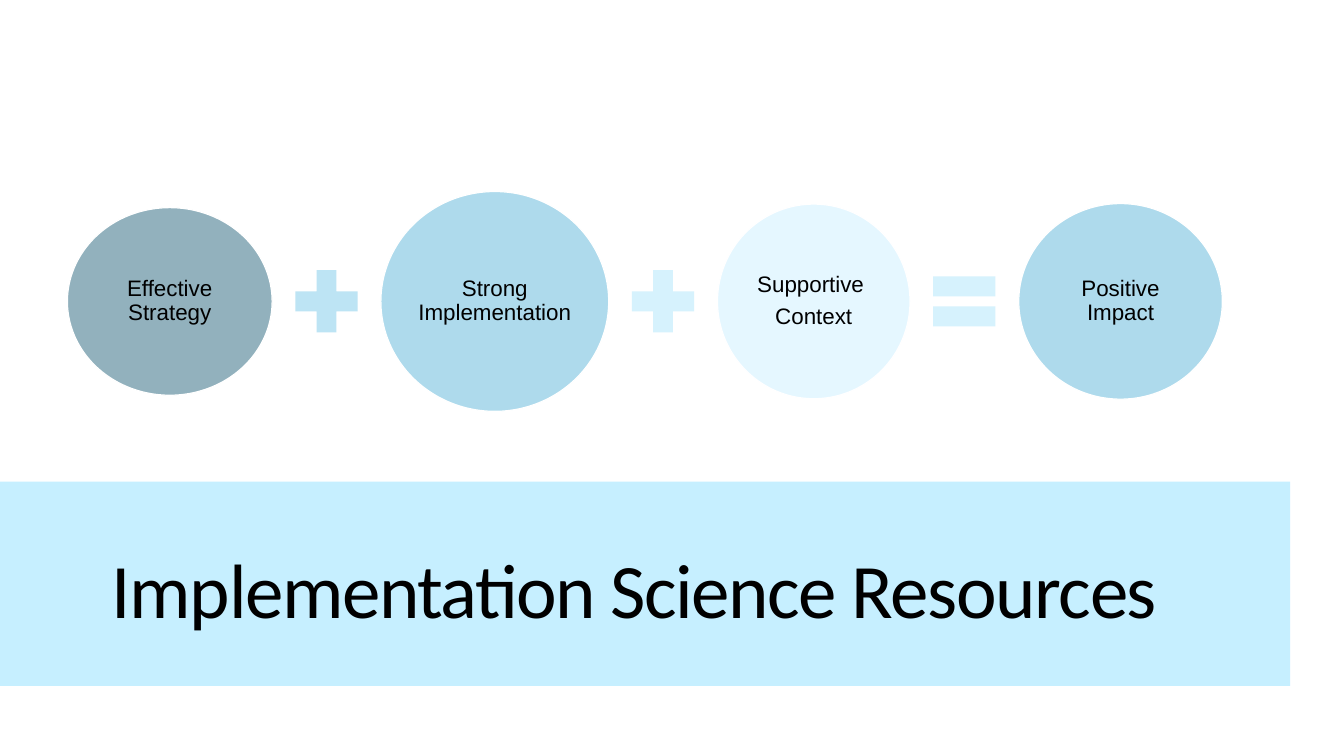
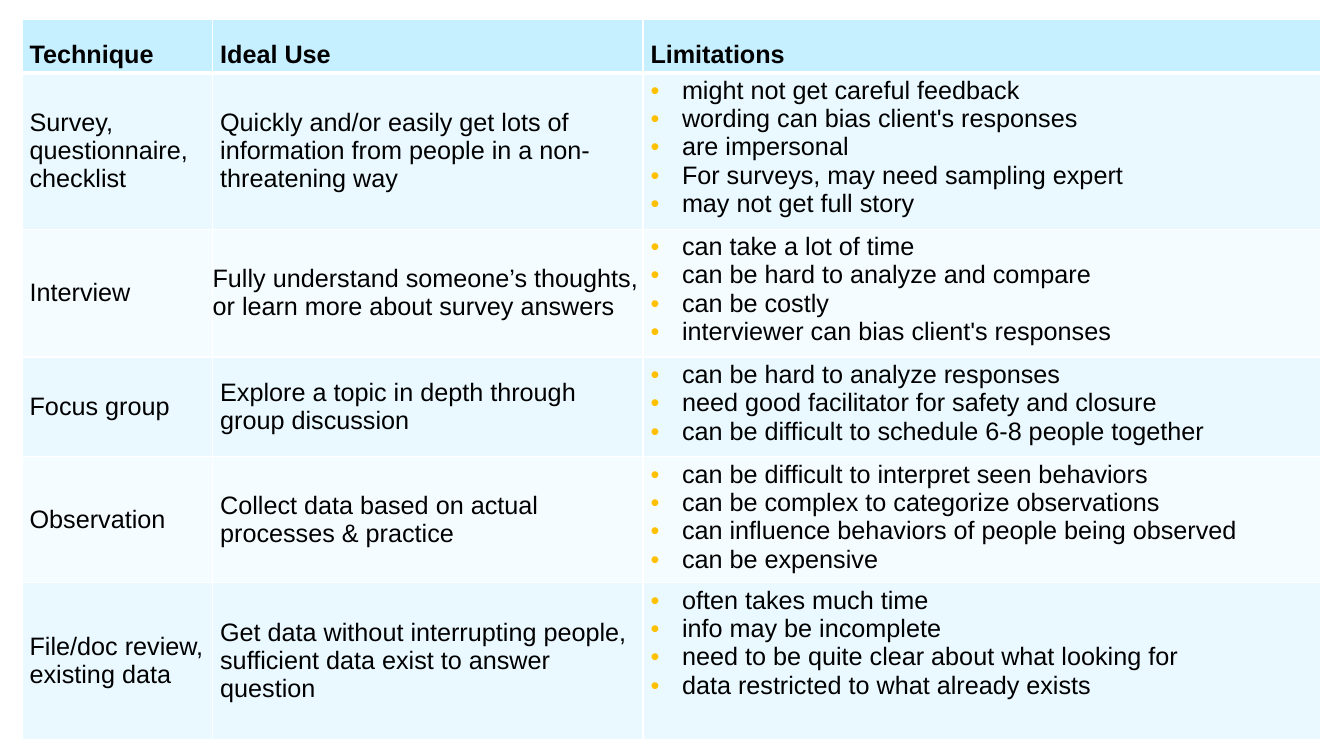
from dataclasses import dataclass

from lxml.etree import SubElement
from pptx import Presentation
from pptx.dml.color import RGBColor
from pptx.enum.shapes import MSO_SHAPE
from pptx.enum.text import MSO_ANCHOR, PP_ALIGN
from pptx.oxml.ns import qn
from pptx.util import Pt


@dataclass(frozen=True)
class Theme:
    band: str = "C6EFFF"
    text: str = "000000"
    white: str = "FFFFFF"
    slate: str = "92B1BD"
    sky: str = "AEDAEC"
    ice: str = "E5F7FF"
    strong_sign: str = "BDE4F4"
    pale_sign: str = "D6F2FD"
    odd_row: str = "EAF9FF"
    even_row: str = "F5FCFF"
    bullet: str = "FFC000"
    title_font: str = "Calibri"
    body_font: str = "Arial"
    title_size: float = 55
    table_size: float = 18
    circle_size: float = 16


THEME = Theme()

EQUATION_LEFT, EQUATION_MIDDLE = 48.2, 215.3
EQUATION_GAP, SIGN_SIZE = 8.6, 60.5

# Circles: lines, width, height, fill
CIRCLES = [
    (["Effective Strategy"], 146.2, 134, THEME.slate),
    (["Strong Implementation"], 162.7, 157, THEME.sky),
    (["Supportive ", "Context"], 137.5, 139, THEME.ice),
    (["Positive Impact"], 145.4, 139.7, THEME.sky),
]
# Signs between the circles: shape, fill
SIGNS = [
    (MSO_SHAPE.MATH_PLUS, THEME.strong_sign),
    (MSO_SHAPE.MATH_PLUS, THEME.pale_sign),
    (MSO_SHAPE.MATH_EQUAL, THEME.pale_sign),
]

COLUMN_WIDTHS = [136.1, 307.4, 483.8]
ROW_HEIGHTS = [38.2, 111.6, 91.4, 71.3, 90, 111.6]
HEADINGS = ["Technique", "Ideal Use", "Limitations"]
TECHNIQUES = [
    ("Survey, questionnaire, checklist",
     "Quickly and/or easily get lots of information from people in a non- threatening way",
     ["might not get careful feedback",
      "wording can bias client's responses",
      "are impersonal",
      "For surveys, may need sampling expert",
      "may not get full story"]),
    ("Interview",
     "Fully understand someone’s thoughts, or learn more about survey answers",
     ["can take a lot of time",
      "can be hard to analyze and compare",
      "can be costly",
      "interviewer can bias client's responses"]),
    ("Focus group",
     "Explore a topic in depth through group discussion",
     ["can be hard to analyze responses",
      "need good facilitator for safety and closure",
      "can be difficult to schedule 6-8 people together"]),
    ("Observation",
     "Collect data based on actual processes & practice",
     ["can be difficult to interpret seen behaviors",
      "can be complex to categorize observations",
      "can influence behaviors of people being observed",
      "can be expensive"]),
    ("File/doc review, existing data",
     "Get data without interrupting people, sufficient data exist to answer question",
     ["often takes much time",
      "info may be incomplete",
      "need to be quite clear about what looking for",
      "data restricted to what already exists"]),
]


def color(value):
    return RGBColor.from_string(value)


def style_font(paragraph, name, size, bold=False):
    font = paragraph.font
    font.name, font.size, font.bold = name, Pt(size), bold
    font.color.rgb = color(THEME.text)


def set_margins(target, horizontal, vertical):
    """Set the inner margins of a text frame or table cell."""
    target.margin_left = target.margin_right = Pt(horizontal)
    target.margin_top = target.margin_bottom = Pt(vertical)


def fill_paragraphs(text_frame, lines):
    text_frame.text = "\n".join(lines)
    return text_frame.paragraphs


def add_filled_shape(slide, kind, left, top, width, height, fill):
    shape = slide.shapes.add_shape(kind, Pt(left), Pt(top), Pt(width), Pt(height))
    shape.shadow.inherit = False
    shape.fill.solid()
    shape.fill.fore_color.rgb = color(fill)
    shape.line.fill.background()
    return shape


def add_title_band(slide, text):
    title = slide.shapes.title
    band = add_filled_shape(slide, MSO_SHAPE.RECTANGLE, 0, 344, 921.6, 146, THEME.band)
    title.element.addprevious(band.element)
    title.left, title.top, title.width, title.height = Pt(20.2), Pt(368.6), Pt(877.7), Pt(88.6)
    title.text_frame.vertical_anchor = MSO_ANCHOR.BOTTOM
    paragraph = fill_paragraphs(title.text_frame, [text])[0]
    paragraph.alignment = PP_ALIGN.CENTER
    paragraph.line_spacing = 0.9
    style_font(paragraph, THEME.title_font, THEME.title_size)
    paragraph.runs[0].font._element.set("spc", "-100")


def add_circle(slide, lines, left, width, height, fill):
    circle = add_filled_shape(slide, MSO_SHAPE.OVAL, left, EQUATION_MIDDLE - height / 2,
                              width, height, fill)
    circle.line.color.rgb = color(THEME.white)
    circle.line.width = Pt(0.85)
    text_frame = circle.text_frame
    text_frame.word_wrap = True
    text_frame.vertical_anchor = MSO_ANCHOR.MIDDLE
    set_margins(text_frame, 1.6, 1.6)
    for paragraph in fill_paragraphs(text_frame, lines):
        paragraph.alignment = PP_ALIGN.CENTER
        paragraph.line_spacing = 0.9
        paragraph.space_after = Pt(0.35 * THEME.circle_size)
        style_font(paragraph, THEME.body_font, THEME.circle_size)


def add_equation(slide):
    """Lay circles and signs in one row with equal gaps."""
    left = EQUATION_LEFT
    for index, (lines, width, height, fill) in enumerate(CIRCLES):
        add_circle(slide, lines, left, width, height, fill)
        left += width + EQUATION_GAP
        if index < len(SIGNS):
            kind, sign_fill = SIGNS[index]
            add_filled_shape(slide, kind, left, EQUATION_MIDDLE - SIGN_SIZE / 2,
                             SIGN_SIZE, SIGN_SIZE, sign_fill)
            left += SIGN_SIZE + EQUATION_GAP


def add_bullet(paragraph):
    properties = paragraph._p.get_or_add_pPr()
    properties.set("marL", str(Pt(22.5)))
    properties.set("indent", str(-Pt(22.5)))
    bullet_color = SubElement(properties, qn("a:buClr"))
    SubElement(bullet_color, qn("a:srgbClr")).set("val", THEME.bullet)
    SubElement(properties, qn("a:buFont")).set("typeface", THEME.body_font)
    SubElement(properties, qn("a:buChar")).set("char", "•")


def set_borders(cell, top_width, bottom_width):
    properties = cell._tc.get_or_add_tcPr()
    widths = {"a:lnL": 1, "a:lnR": 1, "a:lnT": top_width, "a:lnB": bottom_width}
    for position, (tag, width) in enumerate(widths.items()):
        line = properties.makeelement(qn(tag), {"w": str(Pt(width))})
        fill = SubElement(line, qn("a:solidFill"))
        SubElement(fill, qn("a:srgbClr")).set("val", THEME.white)
        properties.insert(position, line)


def fill_cell(cell, lines, fill, anchor, bold=False, bulleted=False):
    cell.fill.solid()
    cell.fill.fore_color.rgb = color(fill)
    cell.vertical_anchor = anchor
    set_margins(cell, 5.4, 2.7)
    for paragraph in fill_paragraphs(cell.text_frame, lines):
        if bulleted:
            add_bullet(paragraph)
        style_font(paragraph, THEME.body_font, THEME.table_size, bold)


def add_technique_table(slide):
    table = slide.shapes.add_table(
        len(ROW_HEIGHTS), len(COLUMN_WIDTHS), Pt(15.8), Pt(13.9),
        Pt(sum(COLUMN_WIDTHS)), Pt(sum(ROW_HEIGHTS))).table
    table.horz_banding = False
    for column, width in zip(table.columns, COLUMN_WIDTHS):
        column.width = Pt(width)
    for row, height in zip(table.rows, ROW_HEIGHTS):
        row.height = Pt(height)

    for column, heading in enumerate(HEADINGS):
        cell = table.cell(0, column)
        fill_cell(cell, [heading], THEME.band, MSO_ANCHOR.BOTTOM, bold=True)
        set_borders(cell, 1, 3)
    for row, (technique, ideal_use, limitations) in enumerate(TECHNIQUES, start=1):
        fill = THEME.odd_row if row % 2 else THEME.even_row
        for column, lines in enumerate([[technique], [ideal_use], limitations]):
            bulleted = lines is limitations
            anchor = MSO_ANCHOR.TOP if bulleted else MSO_ANCHOR.MIDDLE
            cell = table.cell(row, column)
            fill_cell(cell, lines, fill, anchor, bulleted=bulleted)
            set_borders(cell, 3 if row == 1 else 1, 1)
    # The interview use needs the full column width to stay on two lines.
    set_margins(table.cell(2, 1), 0, 0)


def main():
    presentation = Presentation()
    presentation.slide_width, presentation.slide_height = Pt(960), Pt(540)
    title_only, blank = presentation.slide_layouts[5], presentation.slide_layouts[6]

    equation_slide = presentation.slides.add_slide(title_only)
    add_title_band(equation_slide, "Implementation Science Resources ")
    add_equation(equation_slide)

    add_technique_table(presentation.slides.add_slide(blank))
    presentation.save("out.pptx")


if __name__ == "__main__":
    main()
